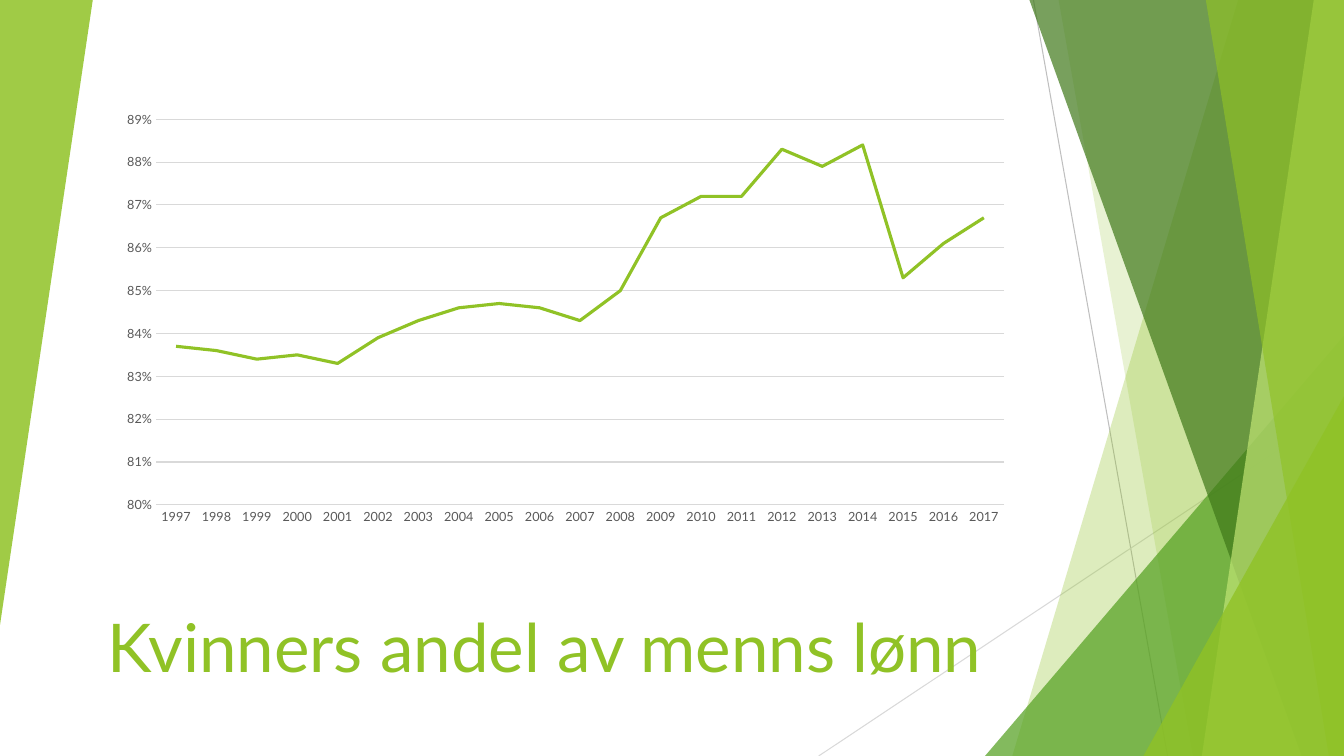
from lxml.etree import SubElement
from pptx import Presentation
from pptx.chart.data import CategoryChartData
from pptx.dml.color import RGBColor
from pptx.enum.chart import XL_CHART_TYPE as Chart, XL_TICK_MARK as Tick
from pptx.enum.shapes import MSO_CONNECTOR as Connector, MSO_SHAPE as Shape
from pptx.enum.text import MSO_ANCHOR as Anchor, PP_ALIGN as Align
from pptx.oxml.ns import qn
from pptx.util import Inches, Pt

TITLE = "Kvinners andel av menns lønn"
FONT = "Lato"
FIRST_YEAR = 1997
SHARES = [0.837, 0.836, 0.834, 0.835, 0.833, 0.839, 0.843, 0.846, 0.847, 0.846, 0.843,
          0.85, 0.867, 0.872, 0.872, 0.883, 0.879, 0.884, 0.853, 0.861, 0.867]

LIME = RGBColor(0x90, 0xC2, 0x26)
GREEN = RGBColor(0x54, 0xA0, 0x21)
FOREST = RGBColor(0x3F, 0x78, 0x19)
PALE = RGBColor(0xC0, 0xE4, 0x74)
GREY = RGBColor(0xBF, 0xBF, 0xBF)
LIGHT_GREY = RGBColor(0xD9, 0xD9, 0xD9)
TEXT_GREY = RGBColor(0x59, 0x59, 0x59)

WIDTH, HEIGHT = 13.33, 7.5
TITLE_BOX = (0.87, 5.65, 9.06, 1.2)
CHART_BOX = (1.08, 1.02, 9.06, 4.27)
HAIRLINES = [((10.25, 0), (11.58, HEIGHT), GREY), ((WIDTH, 4.03), (8.12, HEIGHT), LIGHT_GREY)]
FACETS = [
    ("band", 12.28, 10.04, LIME, 30),
    ("band", 10.5, 11.83, LIME, 20),
    ("corner", 9.77, 3.33, GREEN, 72),
    ("band", 10.21, 12.91, FOREST, 70),
    ("band", 13.03, 11.92, PALE, 70),
    ("band", 11.96, 13.18, LIME, 65),
    ("corner", 11.34, 3.93, LIME, 80),
]
LEFT_WEDGE = (0, 0, 0.92, 6.2)


def inches(values):
    return [Inches(v) for v in values]


def paint(sp, color, opacity):
    sp.shadow.inherit = False
    sp.fill.solid()
    sp.fill.fore_color.rgb = color
    sp.line.fill.background()
    clr = sp.fill._xPr.find(qn("a:solidFill"))[0]
    SubElement(clr, qn("a:alpha")).set("val", str(opacity * 1000))


def add_hairline(s, start, end, color):
    line = s.shapes.add_connector(Connector.STRAIGHT, *inches(start + end))
    line.line.color.rgb = color
    line.line.width = Pt(0.75)
    SubElement(line._element.spPr, qn("a:effectLst"))


def add_triangle(s, box, color, opacity, rotation=0):
    sp = s.shapes.add_shape(Shape.ISOSCELES_TRIANGLE, *inches(box))
    sp.adjustments[0] = 1
    sp.rotation = rotation
    paint(sp, color, opacity)


def add_band(s, top_x, bottom_x, color, opacity):
    corners = [(WIDTH, 0), (WIDTH, HEIGHT), (bottom_x, HEIGHT)]
    builder = s.shapes.build_freeform(Inches(top_x), 0)
    builder.add_line_segments([inches(c) for c in corners], close=True)
    paint(builder.convert_to_shape(), color, opacity)


def add_backdrop(s):
    for hairline in HAIRLINES:
        add_hairline(s, *hairline)
    for kind, a, b, color, opacity in FACETS:
        if kind == "band":
            add_band(s, a, b, color, opacity)
        else:
            add_triangle(s, (a, b, WIDTH - a, HEIGHT - b), color, opacity)
    add_triangle(s, LEFT_WEDGE, LIME, 85, 180)


def add_title(s):
    tf = s.shapes.add_textbox(*inches(TITLE_BOX)).text_frame
    tf.word_wrap = True
    tf.vertical_anchor = Anchor.BOTTOM
    p = tf.paragraphs[0]
    p.alignment = Align.CENTER
    r = p.add_run()
    r.text = TITLE
    r.font.name, r.font.size = FONT, Pt(48)
    r.font.color.rgb = LIME


def add_share_chart(s):
    data = CategoryChartData(number_format="0%")
    data.categories = [str(FIRST_YEAR + i) for i in range(len(SHARES))]
    data.add_series("Series 1", SHARES)
    chart = s.shapes.add_chart(Chart.LINE, *inches(CHART_BOX), data).chart
    chart.has_legend = chart.has_title = False
    chart.font.name, chart.font.size = FONT, Pt(10)

    years, percent = chart.category_axis, chart.value_axis
    for axis in (years, percent):
        axis.major_tick_mark = axis.minor_tick_mark = Tick.NONE
        font = axis.tick_labels.font
        font.name, font.size = FONT, Pt(9)
        font.color.rgb = TEXT_GREY
    percent.minimum_scale, percent.maximum_scale, percent.major_unit = 0.8, 0.89, 0.01
    percent.tick_labels.number_format = "0%"
    percent.tick_labels.number_format_is_linked = False
    percent.format.line.fill.background()
    for part in (years, percent.major_gridlines):
        part.format.line.color.rgb = LIGHT_GREY
        part.format.line.width = Pt(0.75)

    chart.plots[0].vary_by_categories = False
    series = chart.plots[0].series[0]
    series.smooth = False
    series.format.line.color.rgb = LIME
    series.format.line.width = Pt(2.25)


def main():
    """Build the slide on women's pay as a share of men's pay."""
    prs = Presentation()
    prs.slide_width, prs.slide_height = inches((WIDTH, HEIGHT))
    s = prs.slides.add_slide(prs.slide_layouts[6])
    add_backdrop(s)
    add_title(s)
    add_share_chart(s)
    prs.save("out.pptx")


if __name__ == "__main__":
    main()
